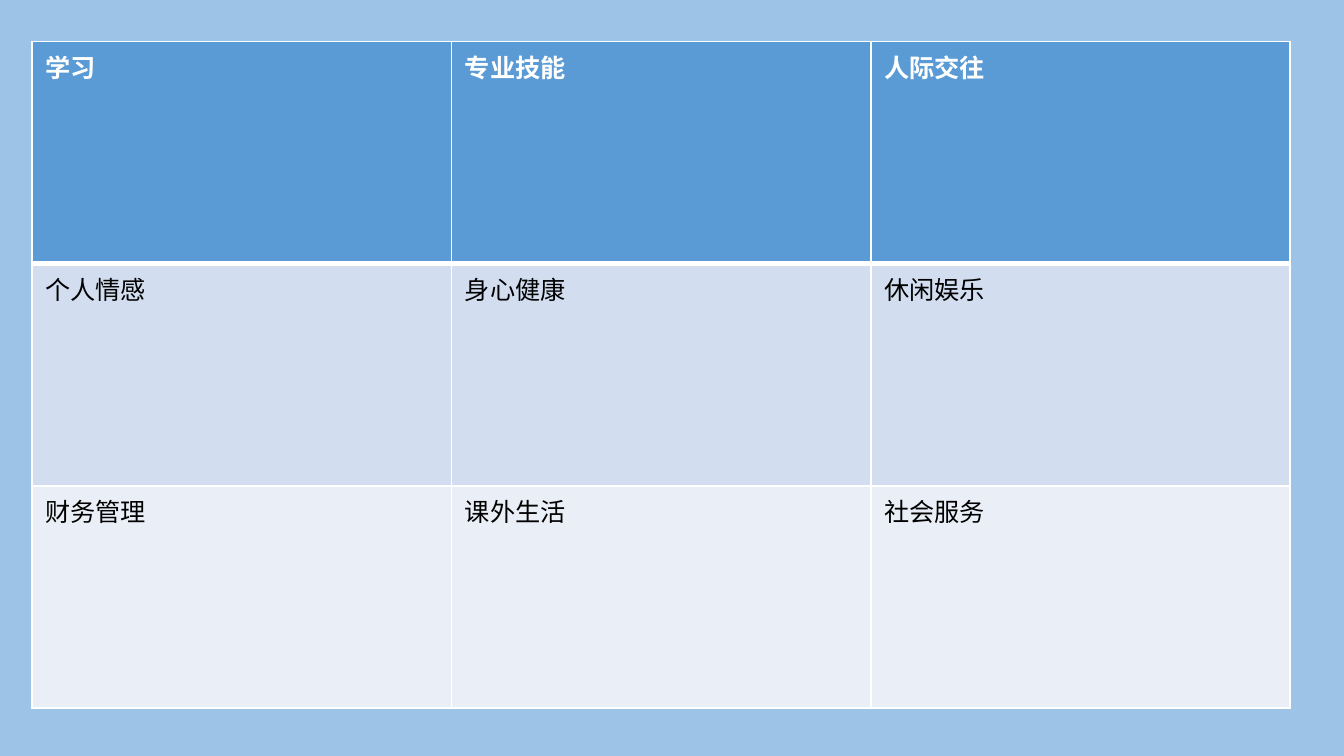
from dataclasses import dataclass

from lxml.etree import SubElement
from pptx import Presentation
from pptx.dml.color import RGBColor as Rgb
from pptx.oxml.ns import qn
from pptx.table import _Cell as Cell
from pptx.util import Pt

WHITE = "FFFFFF"
COL_W = 224.6
ROW_H = 119


@dataclass
class Band:
    """One table row: its labels, colours and rule widths."""
    labels: tuple[str, ...]
    fill: str
    ink: str
    bold: bool = False
    top: float = 1
    base: float = 1


BANDS = [
    Band(("学习", "专业技能", "人际交往"), "5B9BD5", WHITE, bold=True, base=3),
    Band(("个人情感", "身心健康", "休闲娱乐"), "D2DEEF", "000000", top=3),
    Band(("财务管理", "课外生活", "社会服务"), "EAEFF7", "000000"),
]


def paint(fill, color: str) -> None:
    fill.solid()
    fill.fore_color.rgb = Rgb.from_string(color)


def edge(cell: Cell, side: str, width: float) -> None:
    """Add a white border; call before the cell gets its fill."""
    props = cell._tc.get_or_add_tcPr()
    line = SubElement(props, qn(f"a:ln{side}"), w=str(int(Pt(width))))
    solid = SubElement(line, qn("a:solidFill"))
    SubElement(solid, qn("a:srgbClr"), val=WHITE)


def draw_cell(cell: Cell, label: str, band: Band) -> None:
    for side, width in (("L", 1), ("R", 1), ("T", band.top), ("B", band.base)):
        edge(cell, side, width)
    paint(cell.fill, band.fill)
    run = cell.text_frame.paragraphs[0].add_run()
    run.text = label
    font = run.font
    font.name, font.size, font.bold = "Calibri", Pt(13.5), band.bold
    paint(font.fill, band.ink)


def main() -> None:
    deck = Presentation()
    deck.slide_width, deck.slide_height = Pt(720), Pt(405)
    slide = deck.slides.add_slide(deck.slide_layouts[6])
    paint(slide.background.fill, "9DC3E6")

    rows, cols = len(BANDS), len(BANDS[0].labels)
    table = slide.shapes.add_table(
        rows, cols, Pt(17.3), Pt(22.3), Pt(cols * COL_W), Pt(rows * ROW_H)
    ).table
    for col in table.columns:
        col.width = Pt(COL_W)
    for row, band in zip(table.rows, BANDS):
        row.height = Pt(ROW_H)
        for cell, label in zip(row.cells, band.labels):
            draw_cell(cell, label, band)

    deck.save("out.pptx")


if __name__ == "__main__":
    main()
